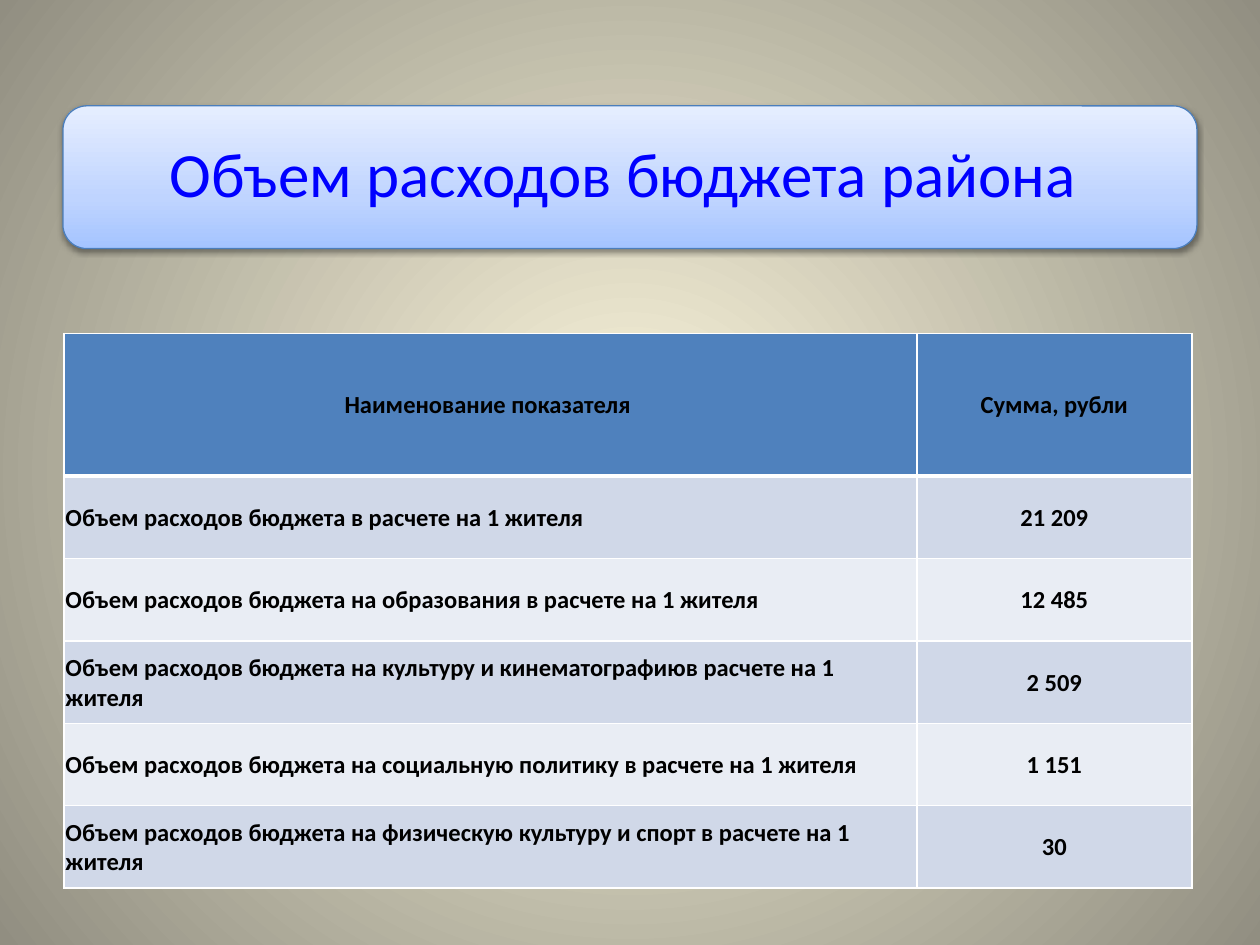
from dataclasses import dataclass

import pptx
import pptx.dml.color
import pptx.enum.shapes
import pptx.enum.text
import pptx.oxml
import pptx.oxml.ns
import pptx.util
from lxml import etree

Pt = pptx.util.Pt
RGB = pptx.dml.color.RGBColor.from_string
ALIGN = pptx.enum.text.PP_ALIGN
MIDDLE = pptx.enum.text.MSO_ANCHOR.MIDDLE
qn = pptx.oxml.ns.qn
NS = pptx.oxml.ns.nsdecls("a")

WIDTH, HEIGHT = pptx.util.Inches(10), pptx.util.Inches(7.5)
FONT = "Calibri"
COLORS = {
    "title": "0000FF", "text": "000000", "outline": "4B7EBC", "border": "FFFFFF",
    "header": "4F81BD", "odd": "D0D8E8", "even": "E9EDF4", "shadow": "000000",
}
BACKGROUND = [(0, "FCF7DD"), (100, "918E81")]
PANEL = [(0, "A4C4FF"), (35, "BFD4FF"), (100, "E6EEFF")]
CENTRE_PATH = ('<a:path path="circle"><a:fillToRect l="50000" t="50000" '
               'r="50000" b="50000"/></a:path>')
UPWARD = '<a:lin ang="16200000" scaled="0"/>'


@dataclass
class Box:
    """A rectangle in shares of the slide's width and height."""
    left: float
    top: float
    width: float
    height: float

    def emu(self) -> list[int]:
        return [int(self.left * WIDTH), int(self.top * HEIGHT),
                int(self.width * WIDTH), int(self.height * HEIGHT)]


@dataclass
class Row:
    name: str
    amount: str


TITLE_BOX = Box(0.05, 0.112, 0.9, 0.151)
TABLE_BOX = Box(0.051, 0.353, 0.895, 0.587)
NAME_SHARE, HEADER_SHARE = 0.756, 0.257
ROWS = [
    Row("Наименование показателя ", "Сумма, рубли"),
    Row("Объем расходов бюджета в расчете на 1 жителя", "21 209"),
    Row("Объем расходов бюджета на образования в расчете на 1 жителя", "12 485"),
    Row("Объем расходов бюджета на культуру и кинематографиюв расчете на 1 жителя", "2 509"),
    Row("Объем расходов бюджета на социальную политику в расчете на 1 жителя", "1 151"),
    Row("Объем расходов бюджета на физическую культуру и спорт в расчете на 1 жителя", "30"),
]


def set_gradient(fill, parent, stops: list[tuple[int, str]], direction: str) -> None:
    fill.gradient()
    old = parent.find(".//" + qn("a:gradFill"))
    marks = "".join(f'<a:gs pos="{pos * 1000}"><a:srgbClr val="{color}"/></a:gs>'
                    for pos, color in stops)
    new = pptx.oxml.parse_xml(
        f'<a:gradFill {NS} rotWithShape="1"><a:gsLst>{marks}</a:gsLst>{direction}</a:gradFill>')
    old.getparent().replace(old, new)


def add_run(p, text: str, size: float, color: str, bold: bool = False) -> None:
    r = p.add_run()
    r.text = text
    r.font.name, r.font.size, r.font.bold = FONT, Pt(size), bold
    r.font.color.rgb = RGB(COLORS[color])


def add_panel(s, box: Box) -> None:
    sp = s.shapes.add_shape(pptx.enum.shapes.MSO_SHAPE.ROUNDED_RECTANGLE, *box.emu())
    set_gradient(sp.fill, sp._element.spPr, PANEL, UPWARD)
    sp.line.color.rgb = RGB(COLORS["outline"])
    sp.line.width = Pt(0.75)
    sp.shadow.inherit = False
    sp._element.spPr.find(qn("a:effectLst")).append(pptx.oxml.parse_xml(
        f'<a:outerShdw {NS} blurRad="{Pt(3.1)}" dist="{Pt(1.6)}" dir="5400000" '
        f'rotWithShape="0"><a:srgbClr val="{COLORS["shadow"]}">'
        '<a:alpha val="38000"/></a:srgbClr></a:outerShdw>'))


def set_title(s, text: str, box: Box) -> None:
    sp = s.shapes.title
    sp.left, sp.top, sp.width, sp.height = box.emu()
    s.shapes._spTree.append(sp._element)  # in front of the panel
    tf = sp.text_frame
    tf.word_wrap, tf.vertical_anchor = True, MIDDLE
    tf.auto_size = pptx.enum.text.MSO_AUTO_SIZE.NONE
    tf.margin_left = tf.margin_right = pptx.util.Inches(0.15)
    tf.margin_top = tf.margin_bottom = pptx.util.Inches(0.15)
    p = tf.paragraphs[0]
    p.alignment, p.line_spacing = ALIGN.CENTER, 0.9
    add_run(p, text, 36, "title")


def set_borders(cell, widths: dict[str, float]) -> None:
    tc_pr = cell._tc.get_or_add_tcPr()
    for side, width in widths.items():
        ln = etree.SubElement(tc_pr, qn(f"a:ln{side}"), w=str(Pt(width)))
        fill = etree.SubElement(ln, qn("a:solidFill"))
        etree.SubElement(fill, qn("a:srgbClr"), val=COLORS["border"])


def fill_cell(cell, text: str, row: int, align) -> None:
    set_borders(cell, {"L": 1, "R": 1, "T": 3 if row == 1 else 1, "B": 3 if row == 0 else 1})
    cell.fill.solid()
    shade = "header" if row == 0 else "odd" if row % 2 else "even"
    cell.fill.fore_color.rgb = RGB(COLORS[shade])
    cell.vertical_anchor = MIDDLE
    cell.margin_left = cell.margin_right = cell.margin_top = pptx.util.Inches(0.01)
    cell.margin_bottom = 0
    p = cell.text_frame.paragraphs[0]
    p.alignment = align
    add_run(p, text, 14, "text", bold=True)


def add_budget_table(s, rows: list[Row], box: Box) -> None:
    left, top, width, height = box.emu()
    table = s.shapes.add_table(len(rows), 2, left, top, width, height).table
    table.horz_banding = False
    for column, share in zip(table.columns, (NAME_SHARE, 1 - NAME_SHARE)):
        column.width = int(width * share)
    body_share = (1 - HEADER_SHARE) / (len(rows) - 1)
    for i, row in enumerate(rows):
        table.rows[i].height = int(height * (body_share if i else HEADER_SHARE))
        fill_cell(table.cell(i, 0), row.name, i, ALIGN.LEFT if i else ALIGN.CENTER)
        fill_cell(table.cell(i, 1), row.amount, i, ALIGN.CENTER)


def main() -> None:
    prs = pptx.Presentation()
    prs.slide_width, prs.slide_height = WIDTH, HEIGHT
    s = prs.slides.add_slide(prs.slide_layouts[5])

    # Background
    set_gradient(s.background.fill, s._element, BACKGROUND, CENTRE_PATH)

    # Title on its panel
    add_panel(s, TITLE_BOX)
    set_title(s, "Объем расходов бюджета района ", TITLE_BOX)

    # Spending per resident
    add_budget_table(s, ROWS, TABLE_BOX)

    prs.save("out.pptx")


if __name__ == "__main__":
    main()
